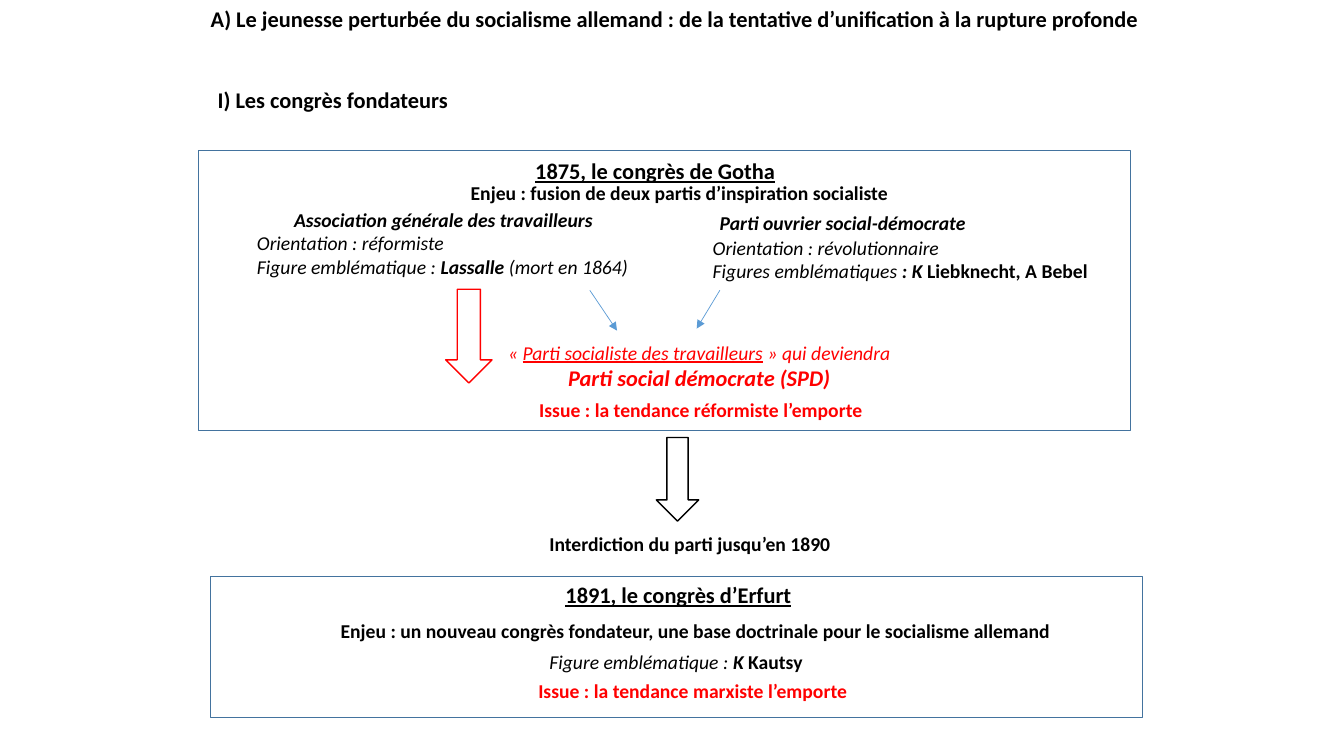
"""Build the slide on the founding congresses of German socialism."""
import pptx
import pptx.chart.data
import pptx.dml.color
import pptx.enum.shapes
import pptx.enum.text
import pptx.oxml
import pptx.oxml.ns
import pptx.util
from pptx.util import Inches

THEME = {
    "font": "Calibri", "spacer_font": "Arial",
    "heading": 16, "body": 14, "spacer": 18,
    "black": "000000", "red": "FF0000", "grey": "323232",
    "frame": "43739E", "arrow": "5B9BD5",
    "line": 1, "thin_line": 0.5,
}

TITLE = ((1.99, 0, 9.52, 0.37), "left", [
    ("heading", "black", [
        ("A) Le jeunesse perturbée du socialisme allemand : de la tentative d’unification à la rupture profonde", "b")])])

FRAMES = [(2.09, 5.72, 9.24, 1.4), (1.97, 1.49, 9.24, 2.78)]
BLOCK_ARROWS = [((4.42, 2.87, 0.46, 0.93), "red"), ((6.51, 4.34, 0.42, 0.83), "black")]
MERGER_ARROWS = [(5.85, 2.88, 6.12, 3.28), (7.14, 2.88, 6.91, 3.26)]

LINES = [
    ((2.06, 0.81, 2.52, 0.37), "heading", "black", "b", "I) Les congrès fondateurs"),
    ((5.21, 1.51, 2.61, 0.37), "heading", "black", "bu", "1875, le congrès de Gotha"),
    ((4.57, 1.75, 4.4, 0.34), "body", "black", "b", "Enjeu : fusion de deux partis d’inspiration socialiste"),
    ((5.25, 3.9, 3.43, 0.34), "body", "red", "b", "Issue : la tendance réformiste l’emporte"),
    ((5.35, 5.23, 3.02, 0.34), "body", "black", "b", "Interdiction du parti jusqu’en 1890"),
    ((5.51, 5.72, 2.48, 0.37), "heading", "black", "bu", "1891, le congrès d’Erfurt"),
    ((3.28, 6.09, 7.33, 0.34), "body", "black", "b",
     "Enjeu : un nouveau congrès fondateur, une base doctrinale pour le socialisme allemand"),
    ((5.24, 6.69, 3.29, 0.34), "body", "red", "b", "Issue : la tendance marxiste l’emporte"),
]

PASSAGES = [
    ((2.45, 2.01, 3.9, 0.81), "first_centred", [
        ("body", "black", [("Association générale des travailleurs", "bi")]),
        ("body", "black", [("Orientation : réformiste", "i")]),
        ("body", "black", [("Figure emblématique : ", "i"), ("Lassalle", "bi"), (" (mort en 1864)", "i")])]),
    ((6.97, 1.99, 3.95, 0.88), "left", [
        ("body", "black", [(" ", "spacer"), ("Parti ouvrier social-démocrate", "bi")]),
        ("body", "black", [("Orientation : révolutionnaire", "i")]),
        ("body", "black", [("Figures emblématiques ", "i"), (": K ", "bi"), ("Liebknecht, A Bebel", "b")])]),
    ((4.92, 3.33, 4.03, 0.61), "centred", [
        ("body", "red", [("« ", "i"), ("Parti socialiste des travailleurs", "iu"), (" » qui deviendra", "i")]),
        ("heading", "red", [("Parti social démocrate (SPD)", "bi")])]),
    ((5.35, 6.4, 2.71, 0.34), "left", [
        ("body", "black", [("Figure emblématique : ", "i"), ("K ", "bi"), ("Kautsy", "b")])]),
]


def color(name):
    return pptx.dml.color.RGBColor.from_string(THEME[name])


def set_style(font, style):
    if style == "spacer":
        font.name = THEME["spacer_font"]
        font.size = pptx.util.Pt(THEME["spacer"])
        font.color.rgb = color("grey")
        return
    font.bold = "b" in style
    font.italic = "i" in style
    font.underline = "u" in style


def write_text(shape, alignment, paragraphs):
    frame = shape.text_frame
    frame.word_wrap = False
    frame.auto_size = pptx.enum.text.MSO_AUTO_SIZE.SHAPE_TO_FIT_TEXT
    frame.vertical_anchor = pptx.enum.text.MSO_ANCHOR.TOP
    for index, (size, color_name, runs) in enumerate(paragraphs):
        paragraph = frame.add_paragraph() if index else frame.paragraphs[0]
        centred = alignment == "centred" or (alignment == "first_centred" and index == 0)
        align = pptx.enum.text.PP_ALIGN
        paragraph.alignment = align.CENTER if centred else align.LEFT
        paragraph.font.name = THEME["font"]
        paragraph.font.size = pptx.util.Pt(THEME[size])
        paragraph.font.color.rgb = color(color_name)
        for text, style in runs:
            run = paragraph.add_run()
            run.text = text
            set_style(paragraph.font if len(runs) == 1 else run.font, style)


def add_text(slide, box, alignment, paragraphs):
    write_text(slide.shapes.add_textbox(*map(Inches, box)), alignment, paragraphs)


def add_outline(slide, kind, box, color_name):
    shape = slide.shapes.add_shape(kind, *map(Inches, box))
    shape.shadow.inherit = False
    shape.fill.background()
    shape.line.color.rgb = color(color_name)
    shape.line.width = pptx.util.Pt(THEME["line"])


def add_arrow(slide, ends):
    straight = pptx.enum.shapes.MSO_CONNECTOR.STRAIGHT
    connector = slide.shapes.add_connector(straight, *map(Inches, ends))
    connector.line.color.rgb = color("arrow")
    connector.line.width = pptx.util.Pt(THEME["thin_line"])
    tail = pptx.oxml.parse_xml(f'<a:tailEnd {pptx.oxml.ns.nsdecls("a")} type="triangle"/>')
    connector.line._get_or_add_ln().append(tail)
    effects = pptx.oxml.parse_xml(f'<a:effectLst {pptx.oxml.ns.nsdecls("a")}/>')
    connector._element.spPr.append(effects)


def main():
    presentation = pptx.Presentation()
    presentation.slide_width = Inches(13.33)
    presentation.slide_height = Inches(7.5)
    slide = presentation.slides.add_slide(presentation.slide_layouts.get_by_name("Title Only"))

    title_box, title_alignment, title_paragraphs = TITLE
    title = slide.shapes.title
    title.left, title.top, title.width, title.height = map(Inches, title_box)
    write_text(title, title_alignment, title_paragraphs)

    shapes = pptx.enum.shapes.MSO_SHAPE
    for box in FRAMES:
        add_outline(slide, shapes.RECTANGLE, box, "frame")
    for box, color_name in BLOCK_ARROWS:
        add_outline(slide, shapes.DOWN_ARROW, box, color_name)
    for ends in MERGER_ARROWS:
        add_arrow(slide, ends)
    for box, size, color_name, style, text in LINES:
        add_text(slide, box, "left", [(size, color_name, [(text, style)])])
    for box, alignment, paragraphs in PASSAGES:
        add_text(slide, box, alignment, paragraphs)
    presentation.save("out.pptx")


if __name__ == "__main__":
    main()
